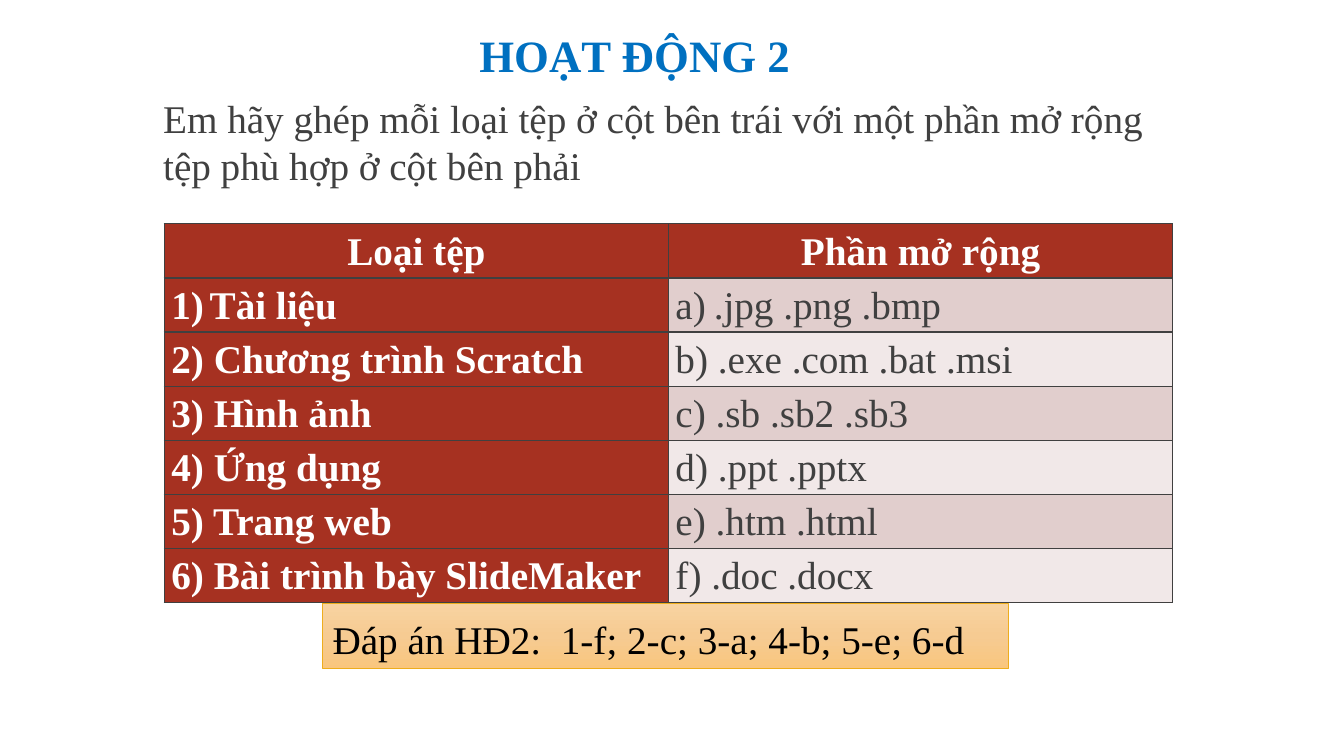
"""Build the matching exercise on file types and their extensions."""
import copy
import pptx
import pptx.util
import pptx.dml.color
import pptx.enum.shapes
import pptx.enum.text
import pptx.oxml.ns
from lxml import etree

TITLE = "HOẠT ĐỘNG 2"
TASK = "Em hãy ghép mỗi loại tệp ở cột bên trái với một phần mở rộng tệp phù hợp ở cột bên phải"
ANSWER = "Đáp án HĐ2:  1-f; 2-c; 3-a; 4-b; 5-e; 6-d"
HEAD = ("Loại tệp", "Phần mở rộng")
PAIRS = [
    ("Tài liệu", ".jpg .png .bmp"),
    ("2) Chương trình Scratch", "b) .exe .com .bat .msi"),
    ("3) Hình ảnh", "c) .sb .sb2 .sb3"),
    ("4) Ứng dụng", "d) .ppt .pptx"),
    ("5) Trang web", "e) .htm .html"),
    ("6) Bài trình bày SlideMaker", "f) .doc .docx"),
]
NUMBERS = ("arabicParenR", "alphaLcParenR")
RED, WHITE, GREY = "A63121", "FFFFFF", "404040"
BANDS = ("F1E8E8", "E1CECD")
GLOW = [(0, "F8D3A1"), (0.5, "F6CB92"), (1, "F9C67E")]

Inches, Pt = pptx.util.Inches, pptx.util.Pt
ALIGN = pptx.enum.text.PP_ALIGN
ANCHOR = pptx.enum.text.MSO_ANCHOR
qn = pptx.oxml.ns.qn


def color(code):
    return pptx.dml.color.RGBColor.from_string(code)


def put(frame, text, size=28, ink=GREY, bold=False, align=ALIGN.LEFT,
        line=1.0, after=0, number=None, anchor=ANCHOR.TOP):
    frame.word_wrap = True
    frame.vertical_anchor = anchor
    para = frame.paragraphs[0]
    if number:
        props = para._p.get_or_add_pPr()
        props.set("marL", str(Inches(0.38)))
        props.set("indent", str(-Inches(0.38)))
        etree.SubElement(props, qn("a:buAutoNum"), type=number)
    para.alignment = align
    para.line_spacing = line
    para.space_after = Pt(after)
    run = para.add_run()
    run.text = text
    run.font.name = "Times New Roman"
    run.font.size = Pt(size)
    run.font.bold = bold
    run.font.color.rgb = color(ink)


def edge(cell):
    props = cell._tc.get_or_add_tcPr()
    for spot, side in enumerate(("a:lnL", "a:lnR", "a:lnT", "a:lnB")):
        line = etree.Element(qn(side), w=str(Pt(1)))
        fill = etree.SubElement(line, qn("a:solidFill"))
        etree.SubElement(fill, qn("a:srgbClr"), val=GREY)
        props.insert(spot, line)


def add_grid(slide):
    rows = [HEAD] + PAIRS
    table = slide.shapes.add_table(
        len(rows), 2, Inches(1.63), Inches(2.22), Inches(10), Inches(3.76)).table
    for r, row in enumerate(rows):
        for c, text in enumerate(row):
            cell = table.cell(r, c)
            cell.margin_left = cell.margin_right = Inches(0.07)
            cell.margin_top = cell.margin_bottom = 0
            strong = r == 0 or c == 0
            cell.fill.solid()
            cell.fill.fore_color.rgb = color(RED if strong else BANDS[r % 2])
            edge(cell)
            put(cell.text_frame, text, ink=WHITE if strong else GREY, bold=strong,
                align=ALIGN.JUSTIFY if r else ALIGN.CENTER, line=1.15, after=6,
                number=NUMBERS[c] if r == 1 else None)


def add_answer(slide):
    box = slide.shapes.add_shape(
        pptx.enum.shapes.MSO_SHAPE.RECTANGLE,
        Inches(3.2), Inches(5.99), Inches(6.8), Inches(0.64))
    box.shadow.inherit = False
    box.fill.gradient()
    box.fill.gradient_angle = 270
    stops = box._element.spPr.find(".//" + qn("a:gsLst"))
    stops.insert(1, copy.deepcopy(stops[0]))
    for stop, (place, code) in zip(box.fill.gradient_stops, GLOW):
        stop.position = place
        stop.color.rgb = color(code)
    box.line.color.rgb = color("EEAD1D")
    box.line.width = Pt(0.5)
    put(box.text_frame, ANSWER, ink="000000", line=1.15, after=6)


def add_text(slide, place, text, **style):
    box = slide.shapes.add_textbox(*map(Inches, place))
    put(box.text_frame, text, **style)


def main():
    deck = pptx.Presentation()
    deck.slide_width, deck.slide_height = Inches(13.33), Inches(7.5)
    slide = deck.slides.add_slide(deck.slide_layouts[6])
    add_text(slide, (0.92, 0.19, 10.75, 0.67), TITLE, size=32, ink="0070C0",
             bold=True, align=ALIGN.CENTER, line=0.9, anchor=ANCHOR.BOTTOM)
    add_text(slide, (1.52, 0.89, 10.17, 1.04), TASK)
    add_answer(slide)
    add_grid(slide)
    deck.save("out.pptx")


if __name__ == "__main__":
    main()
